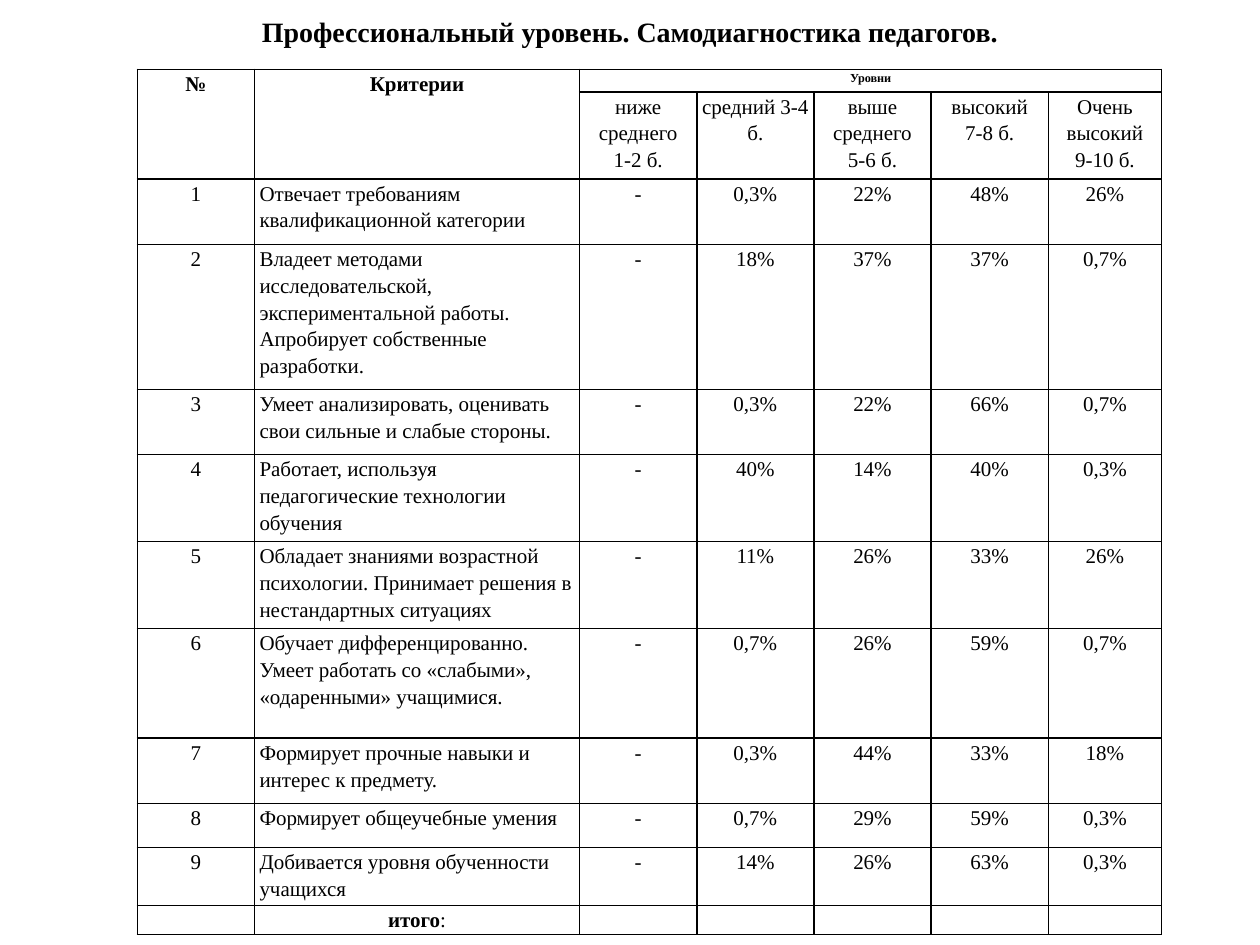
from lxml.etree import SubElement
from pptx import Presentation
from pptx.dml.color import RGBColor
from pptx.enum.text import MSO_ANCHOR as Anchor, PP_ALIGN as Align
from pptx.oxml import parse_xml
from pptx.oxml.ns import nsdecls, qn
from pptx.util import Inches, Pt

BLACK = RGBColor(0, 0, 0)
FONT = "Times New Roman"
TITLE = "Профессиональный уровень. Самодиагностика педагогов."
COLUMNS = [0.93, 2.58, 0.93, 0.93, 0.93, 0.93, 0.9]
ROWS = [0.18, 0.69, 0.52, 1.15, 0.52, 0.69, 0.69, 0.87, 0.52, 0.35, 0.46, 0.23]
LEVELS = ["ниже среднего\n1-2 б.", "средний 3-4 б.", "выше среднего\n5-6 б.",
          "высокий\n7-8 б.", "Очень высокий\n9-10 б."]
CRITERIA = [
    ("Отвечает требованиям квалификационной категории", "- 0,3% 22% 48% 26%"),
    ("Владеет методами исследовательской, экспериментальной работы. "
     "Апробирует собственные разработки.", "- 18% 37% 37% 0,7%"),
    ("Умеет анализировать, оценивать свои сильные и слабые стороны.", "- 0,3% 22% 66% 0,7%"),
    ("Работает, используя педагогические технологии обучения", "- 40% 14% 40% 0,3%"),
    ("Обладает знаниями возрастной психологии. Принимает решения в нестандартных ситуациях",
     "- 11% 26% 33% 26%"),
    ("Обучает дифференцированно. Умеет работать со «слабыми», «одаренными» учащимися.",
     "- 0,7% 26% 59% 0,7%"),
    ("Формирует прочные навыки и интерес к предмету.", "- 0,3% 44% 33% 18%"),
    ("Формирует общеучебные умения", "- 0,7% 29% 59% 0,3%"),
    ("Добивается уровня обученности учащихся", "- 14% 26% 63% 0,3%"),
]


def style_span(span, size, bold=False):
    """Give one run the slide's typeface, size and weight."""
    span.font.name, span.font.size, span.font.bold = FONT, Pt(size), bold
    span.font.color.rgb = BLACK


def add_title(page, left, top, width, height):
    """Place the heading in the title placeholder."""
    box = page.shapes.title
    box.left, box.top, box.width, box.height = left, top, width, height
    frame = box.text_frame
    frame.text = TITLE
    frame.vertical_anchor = Anchor.MIDDLE
    para = frame.paragraphs[0]
    para.alignment = Align.CENTER
    style_span(para.runs[0], 16, True)


def frame_cell(cell):
    """Clear the fill, tighten the margins and rule all four sides."""
    cell.fill.background()
    cell.margin_left = cell.margin_right = Inches(0.04)
    cell.margin_top = cell.margin_bottom = 0
    properties = cell._tc.get_or_add_tcPr()
    for position, side in enumerate("LRTB"):
        properties.insert(position, parse_xml(
            f'<a:ln{side} {nsdecls("a")} w="{Pt(1)}"><a:solidFill>'
            f'<a:srgbClr val="{BLACK}"/></a:solidFill></a:ln{side}>'))


def write_cell(cell, text, size=12, bold=False, align=Align.CENTER):
    """Write and format the text of one cell."""
    frame_cell(cell)
    cell.text_frame.text = text
    for para in cell.text_frame.paragraphs:
        para.alignment, para.line_spacing = align, 1.15
        for span in para.runs:
            style_span(span, size, bold)
        if not para.runs:
            SubElement(para._p, qn("a:endParaRPr"), sz=str(size * 100))


def add_criteria_table(page, left, top):
    """Place the table of criteria against levels."""
    table = page.shapes.add_table(len(ROWS), len(COLUMNS), left, top,
                                  Inches(sum(COLUMNS)), Inches(sum(ROWS))).table
    table.first_row = table.horz_banding = False
    for column, width in zip(table.columns, COLUMNS):
        column.width = Inches(width)
    for row, height in zip(table.rows, ROWS):
        row.height = Inches(height)

    body = [[str(number), name, *values.split()]
            for number, (name, values) in enumerate(CRITERIA, 1)]
    grid = [["№", "Критерии", "Уровни", "", "", "", ""], ["", "", *LEVELS], *body,
            ["", "итого:", "", "", "", "", ""]]
    for r, texts in enumerate(grid):
        for c, text in enumerate(texts):
            is_name = c == 1 and 2 <= r < len(grid) - 1
            write_cell(table.cell(r, c), text, 7 if r == 0 and c > 1 else 12, r == 0,
                       Align.LEFT if is_name else Align.CENTER)

    total = table.cell(len(grid) - 1, 1).text_frame.paragraphs[0]
    total.runs[0].text = "итого"
    total.runs[0].font.bold = True
    colon = total.add_run()
    colon.text = ":"
    style_span(colon, 12)

    for c in (0, 1):
        table.cell(0, c).merge(table.cell(1, c))
    table.cell(0, 2).merge(table.cell(0, len(COLUMNS) - 1))


def main():
    """Build and save the one-slide deck."""
    deck = Presentation()
    deck.slide_width, deck.slide_height = Inches(10), Inches(7.5)
    page = deck.slides.add_slide(deck.slide_layouts[5])
    add_criteria_table(page, Inches(1.09), Inches(0.55))
    add_title(page, 0, 0, deck.slide_width, Inches(0.5))
    deck.save("out.pptx")


if __name__ == "__main__":
    main()
